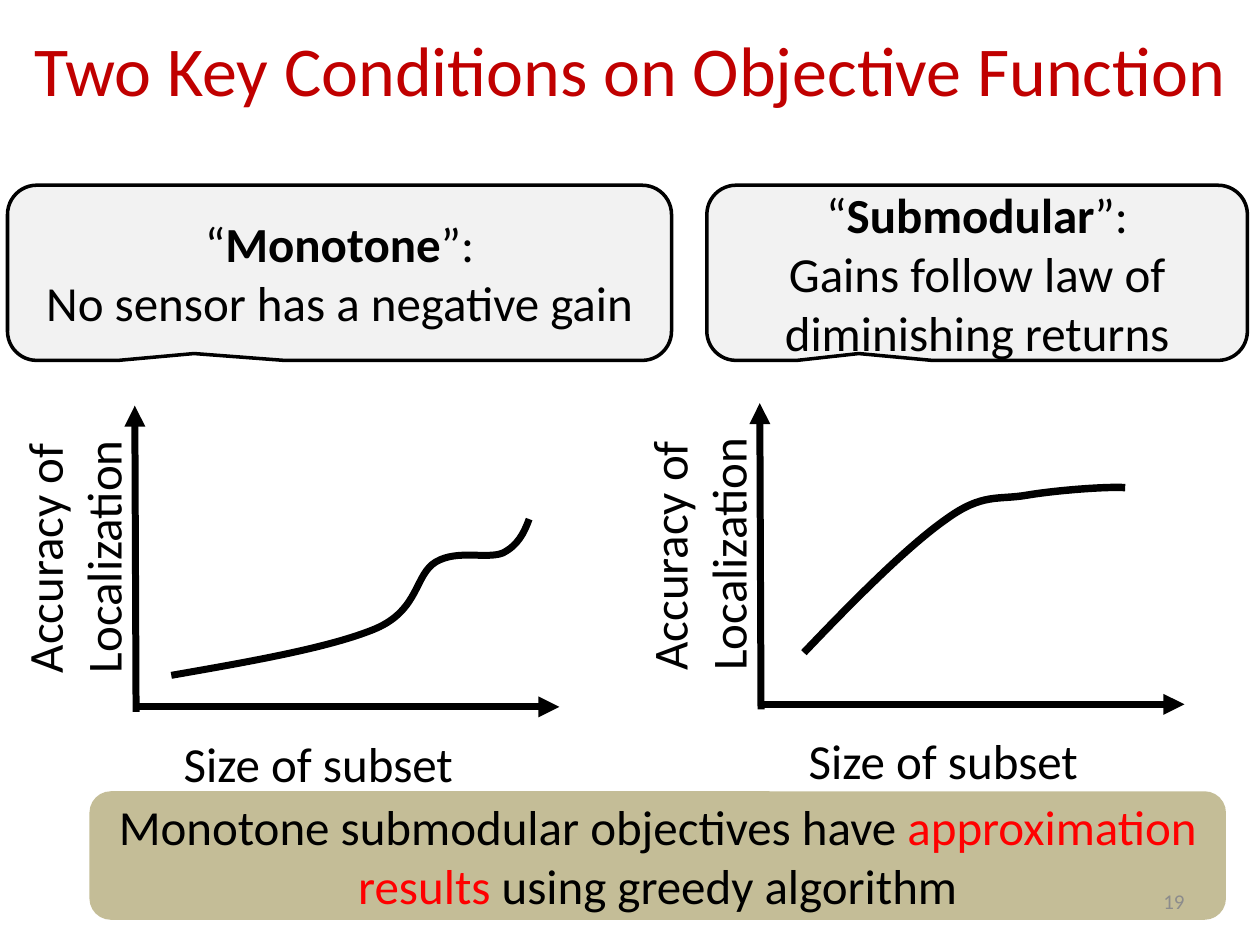
from typing import NamedTuple

from lxml import etree
from pptx import Presentation
from pptx import util as u
from pptx.dml.color import RGBColor
from pptx.enum import shapes, text
from pptx.oxml import ns

BLACK = RGBColor(0x00, 0x00, 0x00)
WHITE = RGBColor(0xFF, 0xFF, 0xFF)
TITLE_RED = RGBColor(0xC0, 0x00, 0x00)
ACCENT_RED = RGBColor(0xFF, 0x00, 0x00)
PALE_GRAY = RGBColor(0xF2, 0xF2, 0xF2)
NUMBER_GRAY = RGBColor(0x8C, 0x8C, 0x8C)
TAN = RGBColor(0xC4, 0xBD, 0x97)

FONT = "Calibri"
CENTER = text.PP_ALIGN.CENTER
MIDDLE = text.MSO_ANCHOR.MIDDLE

Point = tuple[float, float]


class Span(NamedTuple):
    words: str
    color: RGBColor = BLACK
    bold: bool = False


class Callout(NamedTuple):
    left: float
    width: float
    term: str
    meaning: str


class Plot(NamedTuple):
    origin: Point
    start: Point
    curves: list[tuple[Point, Point, Point]]  # two controls and an end each
    weight: float


CALLOUTS = [
    Callout(0.06, 5.27, "Monotone", "No sensor has a negative gain"),
    Callout(5.61, 4.29, "Submodular", "Gains follow law of diminishing returns"),
]

PLOTS = [
    Plot((1.08, 5.61), (1.36, 5.36), [
        ((1.99, 5.25), (2.62, 5.14), (2.98, 4.99)),
        ((3.33, 4.84), (3.29, 4.56), (3.46, 4.46)),
        ((3.63, 4.36), (3.86, 4.44), (3.99, 4.39)),
        ((4.11, 4.33), (4.16, 4.23), (4.20, 4.12)),
    ], 4),
    Plot((6.04, 5.59), (6.38, 5.18), [
        ((6.79, 4.75), (7.21, 4.33), (7.51, 4.12)),
        ((7.80, 3.91), (7.92, 3.97), (8.15, 3.93)),
        ((8.39, 3.89), (8.79, 3.86), (8.93, 3.87)),
    ], 4.25),
]


def write(shape, paragraphs: list[list[Span]], *, size: float = 28,
          align=text.PP_ALIGN.LEFT, anchor=text.MSO_ANCHOR.TOP) -> None:
    """Fill a shape with formatted paragraphs."""
    frame = shape.text_frame
    frame.word_wrap = True
    frame.auto_size = text.MSO_AUTO_SIZE.NONE
    frame.vertical_anchor = anchor
    for index, spans in enumerate(paragraphs):
        para = frame.add_paragraph() if index else frame.paragraphs[0]
        para.alignment = align
        for span in spans:
            run = para.add_run()
            run.text = span.words
            run.font.name = FONT
            run.font.size = u.Pt(size)
            run.font.bold = span.bold
            run.font.color.rgb = span.color


def add_text(page, left: float, top: float, width: float, height: float,
             span: Span, **style):
    box = page.shapes.add_textbox(*map(u.Inches, (left, top, width, height)))
    write(box, [[span]], **style)
    return box


def add_panel(page, kind, left: float, top: float, width: float,
              height: float, fill: RGBColor):
    panel = page.shapes.add_shape(
        kind, *map(u.Inches, (left, top, width, height)))
    panel.shadow.inherit = False
    panel.fill.solid()
    panel.fill.fore_color.rgb = fill
    panel.line.fill.background()
    return panel


def add_callout(page, callout: Callout) -> None:
    panel = add_panel(page, shapes.MSO_SHAPE.ROUNDED_RECTANGULAR_CALLOUT,
                      callout.left, 1.47, callout.width, 1.39, PALE_GRAY)
    for index, value in enumerate((-0.219, 0.461, 0.167)):
        panel.adjustments[index] = value
    panel.line.color.rgb = BLACK
    panel.line.width = u.Pt(2)
    heading = [Span("“"), Span(callout.term, bold=True), Span("”:")]
    write(panel, [heading, [Span(callout.meaning)]],
          align=CENTER, anchor=MIDDLE)


def add_axis(page, start: Point, tip: Point) -> None:
    axis = page.shapes.add_connector(
        shapes.MSO_CONNECTOR.STRAIGHT, *map(u.Inches, start + tip))
    axis.line.color.rgb = BLACK
    axis.line.width = u.Pt(4)
    etree.SubElement(axis.line._get_or_add_ln(), ns.qn("a:tailEnd"),
                     type="triangle")
    etree.SubElement(axis._element.spPr, ns.qn("a:effectLst"))


def add_curve(page, plot: Plot) -> None:
    """Join the knots with a freeform, then bend each segment."""
    builder = page.shapes.build_freeform(*map(u.Inches, plot.start))
    builder.add_line_segments(
        [tuple(map(u.Inches, curve[-1])) for curve in plot.curves],
        close=False)
    line = builder.convert_to_shape()
    line.shadow.inherit = False
    line.fill.background()
    line.line.color.rgb = BLACK
    line.line.width = u.Pt(plot.weight)
    segments = list(line._element.iter(ns.qn("a:lnTo")))
    for segment, curve in zip(segments, plot.curves):
        bend = etree.Element(ns.qn("a:cubicBezTo"))
        for x, y in curve:
            etree.SubElement(bend, ns.qn("a:pt"),
                             x=str(u.Inches(x) - line.left),
                             y=str(u.Inches(y) - line.top))
        segment.getparent().replace(segment, bend)


def add_plot(page, plot: Plot) -> None:
    x, y = plot.origin
    add_axis(page, (x, y + 0.04), (x - 0.01, y - 2.39))
    add_axis(page, (x + 0.02, y), (x + 3.36, y))
    add_text(page, x + 0.28, y + 0.16, 2.62, 0.57, Span("Size of subset"))
    label = add_text(page, x - 1.81, y - 2, 2.62, 1.04,
                     Span("Accuracy of Localization"))
    label.rotation = 270
    add_curve(page, plot)


def main() -> None:
    deck = Presentation()
    deck.slide_width, deck.slide_height = u.Inches(10), u.Inches(7.5)
    page = deck.slides.add_slide(deck.slide_layouts.get_by_name("Title Only"))

    # Title
    title = page.shapes.title
    title.left, title.top = u.Inches(0), u.Inches(-0.05)
    title.width, title.height = u.Inches(10), u.Inches(1.18)
    title.fill.solid()
    title.fill.fore_color.rgb = WHITE
    write(title, [[Span("Two Key Conditions on Objective Function", TITLE_RED)]],
          size=40, align=CENTER, anchor=MIDDLE)

    # Conclusion banner
    banner = add_panel(page, shapes.MSO_SHAPE.ROUNDED_RECTANGLE,
                       0.71, 6.28, 9.02, 1.02, TAN)
    write(banner, [[Span("Monotone submodular objectives have "),
                    Span("approximation results ", ACCENT_RED),
                    Span("using greedy algorithm")]],
          align=CENTER, anchor=MIDDLE)

    # Conditions and their plots
    for callout in CALLOUTS:
        add_callout(page, callout)
    for plot in PLOTS:
        add_plot(page, plot)

    # Slide number
    add_text(page, 7.17, 6.95, 2.33, 0.4, Span("19", NUMBER_GRAY),
             size=12, align=text.PP_ALIGN.RIGHT, anchor=MIDDLE)

    deck.save("out.pptx")


if __name__ == "__main__":
    main()
